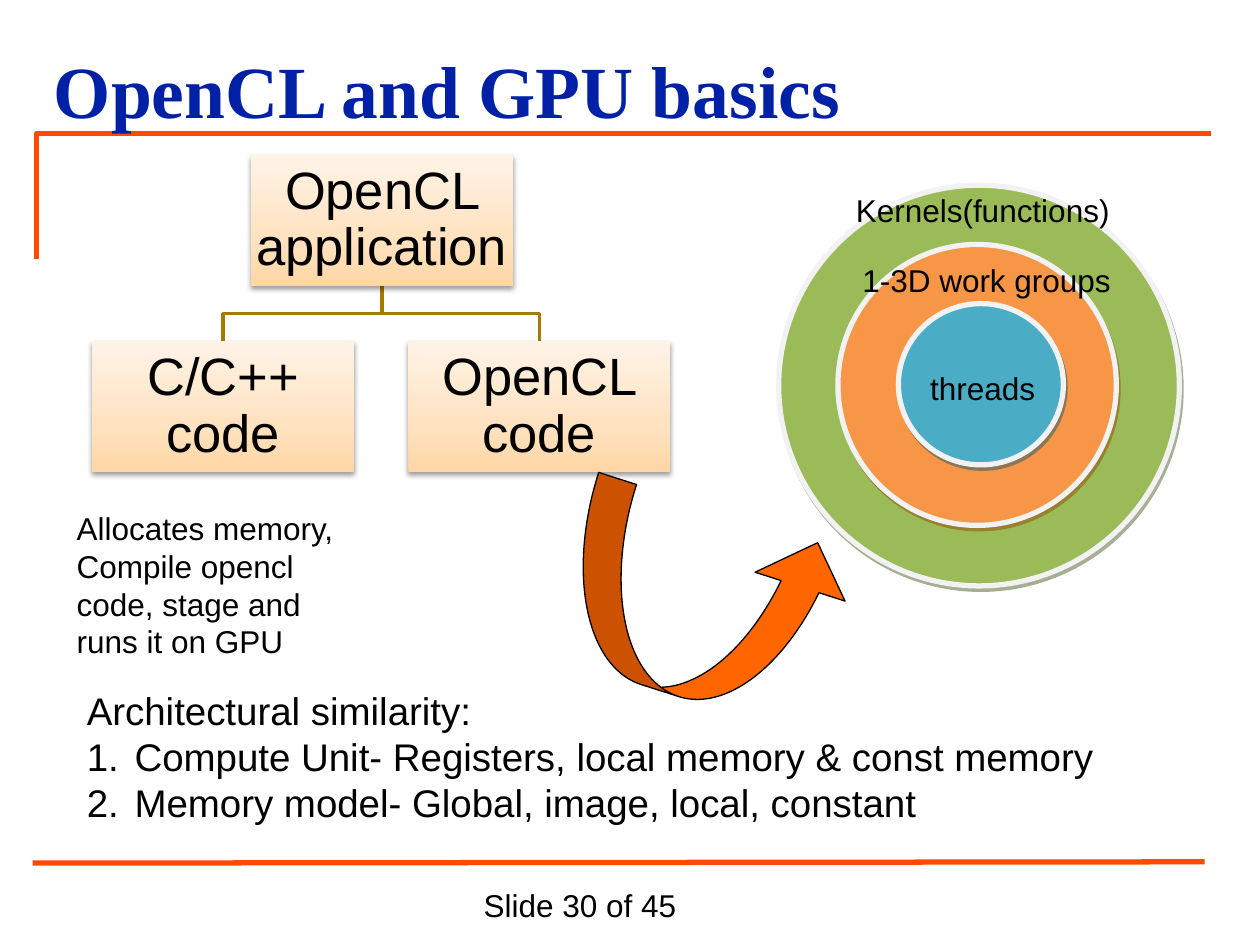
from dataclasses import dataclass

from lxml import etree
from pptx import Presentation
from pptx.dml.color import RGBColor
from pptx.enum.shapes import MSO_CONNECTOR, MSO_SHAPE
from pptx.enum.text import MSO_ANCHOR, PP_ALIGN
from pptx.oxml.ns import qn
from pptx.util import Pt

PX = 9144
RECTANGLE = MSO_SHAPE.RECTANGLE
CIRCLE = MSO_SHAPE.FLOWCHART_CONNECTOR
CURVED_ARROW = MSO_SHAPE.CURVED_UP_ARROW
STRAIGHT = MSO_CONNECTOR.STRAIGHT
LEFT, CENTER = PP_ALIGN.LEFT, PP_ALIGN.CENTER
TOP, MIDDLE = MSO_ANCHOR.TOP, MSO_ANCHOR.MIDDLE

COLORS = {
    "title": "0021A5", "text": "000000", "rule": "FF4A00", "branch": "A37B00",
    "arrow": "FF6600", "ring": "F2F2F2",
    "green": "9BBB59", "green_shadow": "4E6128",
    "orange": "F79646", "orange_shadow": "974706",
    "blue": "4BACC6", "blue_shadow": "205867",
    "node_dark": "FFD6A5", "node_mid": "FFE2BF", "node_light": "FFF3E7",
}
NODE_STOPS = [(0, "node_dark"), (35, "node_mid"), (100, "node_light")]
NODE_WIDTH, NODE_HEIGHT = 208, 104


@dataclass
class Area:
    left: int
    top: int
    width: int
    height: int

    def emu(self) -> tuple[int, ...]:
        return tuple(PX * n for n in (self.left, self.top, self.width, self.height))


@dataclass
class Ring:
    area: Area
    color: str


@dataclass
class Label:
    area: Area
    text: str


@dataclass
class Node:
    left: int
    top: int
    text: str

    @property
    def center(self) -> int:
        return self.left + NODE_WIDTH // 2


def rgb(name: str) -> RGBColor:
    return RGBColor.from_string(COLORS[name])


def write(shape, text: str, *, size: int = 18, color: str = "text",
          font: str = "Arial", bold: bool = False, align=LEFT, anchor=TOP,
          insets: tuple = (10, 5, 10, 5), spacing: float = 1.0,
          numbered_from: int | None = None) -> None:
    frame = shape.text_frame
    frame.word_wrap = True
    frame.vertical_anchor = anchor
    (frame.margin_left, frame.margin_top,
     frame.margin_right, frame.margin_bottom) = (PX * n for n in insets)
    for index, line in enumerate(text.split("\n")):
        para = frame.paragraphs[0] if index == 0 else frame.add_paragraph()
        para.alignment = align
        para.line_spacing = spacing
        if numbered_from is not None and index >= numbered_from:
            properties = para._p.get_or_add_pPr()
            properties.set("marL", str(38 * PX))
            properties.set("indent", str(-38 * PX))
            etree.SubElement(properties, qn("a:buAutoNum"), type="arabicPeriod")
        span = para.add_run()
        span.text = line
        span.font.name = font
        span.font.size = Pt(size)
        span.font.bold = bold
        span.font.color.rgb = rgb(color)


def add_text(page, area: Area, text: str, **style) -> None:
    write(page.shapes.add_textbox(*area.emu()), text, **style)


def add_shape(page, kind, area: Area):
    shape = page.shapes.add_shape(kind, *area.emu())
    shape.shadow.inherit = False
    return shape


def set_line(shape, color: str, width: float) -> None:
    shape.line.color.rgb = rgb(color)
    shape.line.width = Pt(width)


def add_shadow(shape, color: str, alpha: int, blur: float, distance: float,
               angle: int) -> None:
    effects = shape._element.spPr.find(qn("a:effectLst"))
    shadow = etree.SubElement(
        effects, qn("a:outerShdw"), blurRad=str(Pt(blur)), dist=str(Pt(distance)),
        dir=str(angle * 60000), algn="ctr", rotWithShape="0")
    tint = etree.SubElement(shadow, qn("a:srgbClr"), val=COLORS[color])
    etree.SubElement(tint, qn("a:alpha"), val=str(alpha * 1000))


def add_path(page, points: list[tuple[int, int]], color: str, width: float) -> None:
    builder = page.shapes.build_freeform(*points[0], scale=PX)
    builder.add_line_segments(points[1:], close=False)
    shape = builder.convert_to_shape()
    shape.shadow.inherit = False
    shape.fill.background()
    set_line(shape, color, width)


def add_ring(page, ring: Ring) -> None:
    shape = add_shape(page, CIRCLE, ring.area)
    shape.fill.solid()
    shape.fill.fore_color.rgb = rgb(ring.color)
    set_line(shape, "ring", 3)
    add_shadow(shape, f"{ring.color}_shadow", 50, 0, 2.2, 63)


def add_node(page, node: Node) -> None:
    shape = add_shape(page, RECTANGLE,
                      Area(node.left, node.top, NODE_WIDTH, NODE_HEIGHT))
    shape.fill.gradient()
    shape.fill.gradient_angle = 90
    stops = shape._element.spPr.find(qn("a:gradFill")).find(qn("a:gsLst"))
    for stop in list(stops):
        stops.remove(stop)
    for position, color in NODE_STOPS:
        stop = etree.SubElement(stops, qn("a:gs"), pos=str(position * 1000))
        etree.SubElement(stop, qn("a:srgbClr"), val=COLORS[color])
    shape.line.fill.background()
    add_shadow(shape, "text", 38, 3.1, 1.6, 90)
    write(shape, node.text, size=30, align=CENTER, anchor=MIDDLE,
          insets=(2, 2, 2, 2), spacing=0.9)


def add_tree(page, parent: Node, children: list[Node]) -> None:
    bottom = parent.top + NODE_HEIGHT
    for child in children:
        middle = (bottom + child.top) // 2
        add_path(page, [(parent.center, bottom), (parent.center, middle),
                        (child.center, middle), (child.center, child.top)],
                 "branch", 2)
    for node in [parent, *children]:
        add_node(page, node)


def add_frame(page) -> None:
    add_path(page, [(29, 206), (29, 106), (961, 106)], "rule", 3)
    rule = page.shapes.add_connector(
        STRAIGHT, *(PX * n for n in (26, 685, 956, 684)))
    set_line(rule, "rule", 3)
    etree.SubElement(rule._element.spPr, qn("a:effectLst"))
    add_text(page, Area(374, 698, 220, 40), "Slide 30 of 45")
    add_text(page, Area(33, 25, 900, 103), "OpenCL and GPU basics", size=42,
             color="title", font="Times New Roman", bold=True, anchor=MIDDLE,
             insets=(10, 5, 10, 17))


def add_arrow(page) -> None:
    arrow = add_shape(page, CURVED_ARROW, Area(447, 405, 220, 150))
    for index, value in enumerate((0.21, 0.5, 0.25)):
        arrow.adjustments[index] = value
    arrow.rotation = 17.8
    arrow.fill.solid()
    arrow.fill.fore_color.rgb = rgb("arrow")
    set_line(arrow, "text", 0.75)


def main() -> None:
    deck = Presentation()
    deck.slide_width, deck.slide_height = 1000 * PX, 750 * PX
    page = deck.slides.add_slide(deck.slide_layouts[6])
    add_frame(page)
    for ring in (Ring(Area(618, 147, 318, 318), "green"),
                 Ring(Area(665, 194, 221, 223), "orange"),
                 Ring(Area(713, 241, 131, 128), "blue")):
        add_ring(page, ring)
    for label in (Label(Area(650, 147, 260, 40), "Kernels(functions)"),
                  Label(Area(657, 202, 252, 40), "1-3D work groups"),
                  Label(Area(705, 288, 150, 40), "threads")):
        add_text(page, label.area, label.text, align=CENTER)
    add_tree(page, Node(199, 123, "OpenCL application"),
             [Node(73, 271, "C/C++ code"), Node(324, 271, "OpenCL code")])
    add_text(page, Area(51, 399, 228, 131),
             "Allocates memory,\nCompile opencl code, stage and runs it on GPU")
    add_text(page, Area(59, 540, 882, 158),
             "Architectural similarity:\n"
             "Compute Unit- Registers, local memory & const memory\n"
             "Memory model- Global, image, local, constant",
             size=22, numbered_from=1)
    add_arrow(page)
    deck.save("out.pptx")


if __name__ == "__main__":
    main()
